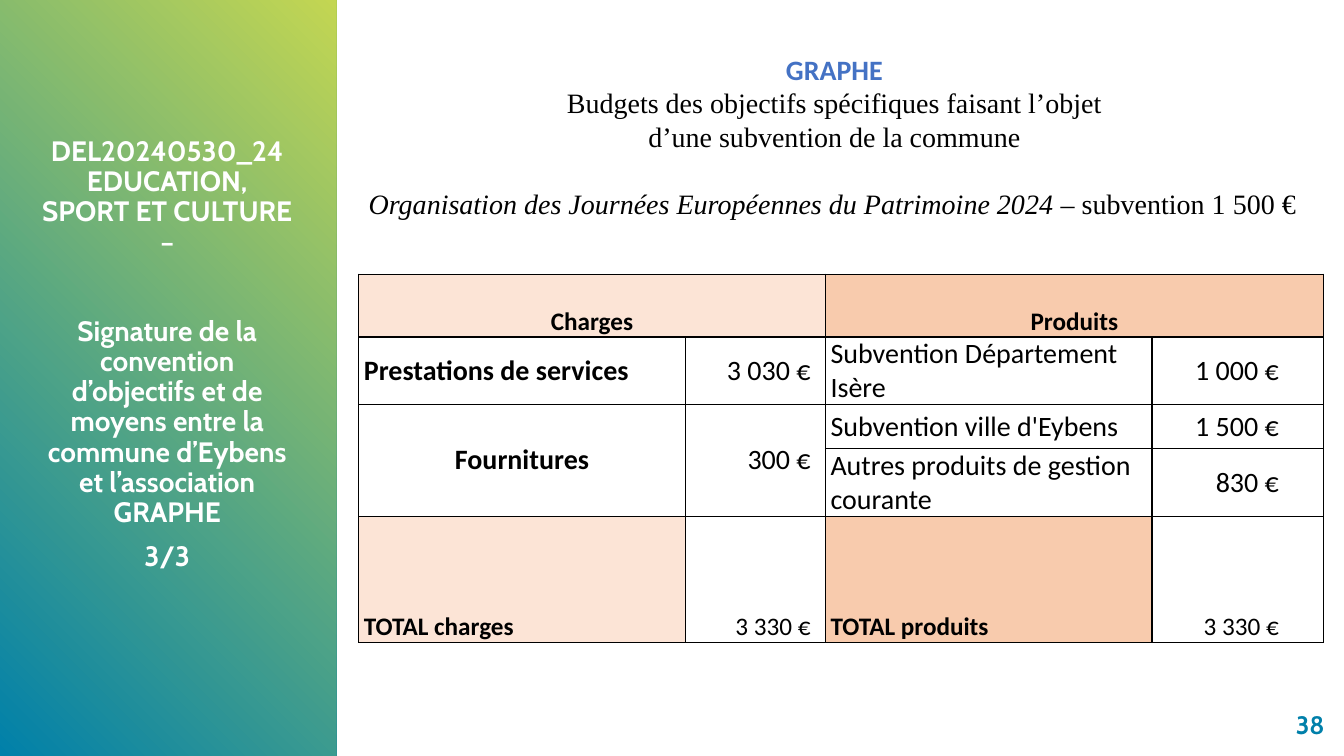
"""Build the slide on the budget of the association's funded objectives."""
from dataclasses import dataclass

from lxml.etree import SubElement
from pptx import Presentation
from pptx.dml.color import RGBColor
from pptx.enum.shapes import MSO_SHAPE as Shape
from pptx.enum.text import MSO_ANCHOR as Anchor, MSO_AUTO_SIZE as AutoSize, PP_ALIGN as Align
from pptx.oxml.ns import qn
from pptx.slide import Slide
from pptx.table import _Cell as Cell
from pptx.text.text import TextFrame
from pptx.util import Cm, Pt

COLORS = {
    "blue": "0080AA", "lime": "C3D652", "heading": "4472C4", "white": "FFFFFF",
    "black": "000000", "charges": "FCE4D6", "produits": "F8CBAD",
}
SERIF = "Times New Roman"
COL_WIDTHS = (8.23, 3.53, 8.23, 4.32)
ROW_HEIGHTS = (1.58, 1.7, 1.12, 1.7, 3.17)
AMOUNT_MARGINS = {1: 0.37, 3: 1.12}


@dataclass
class Entry:
    """One table cell with its place, span and look."""
    row: int
    col: int
    text: str
    bold: bool = False
    align: Align = Align.LEFT
    fill: str = ""
    rows: int = 1
    cols: int = 1


ENTRIES = [
    Entry(0, 0, "Charges", True, Align.CENTER, "charges", cols=2),
    Entry(0, 2, "Produits", True, Align.CENTER, "produits", cols=2),
    Entry(1, 0, "Prestations de services", True),
    Entry(1, 1, "3 030 €", align=Align.RIGHT),
    Entry(1, 2, "Subvention Département Isère"),
    Entry(1, 3, "1 000 €", align=Align.RIGHT),
    Entry(2, 0, "Fournitures", True, Align.CENTER, rows=2),
    Entry(2, 1, "300 €", align=Align.RIGHT, rows=2),
    Entry(2, 2, "Subvention ville d'Eybens"),
    Entry(2, 3, "1 500 €", align=Align.RIGHT),
    Entry(3, 2, "Autres produits de gestion courante"),
    Entry(3, 3, "830 €", align=Align.RIGHT),
    Entry(4, 0, "TOTAL charges", True, fill="charges"),
    Entry(4, 1, "3 330 €", align=Align.RIGHT),
    Entry(4, 2, "TOTAL produits", True, fill="produits"),
    Entry(4, 3, "3 330 €", align=Align.RIGHT),
]


def rgb(name: str) -> RGBColor:
    """Return the named colour."""
    return RGBColor.from_string(COLORS[name])


def write(tf: TextFrame, text: str, *, size: float = 20, font: str = "Calibri",
          color: str = "black", bold: bool = False, italic: bool = False,
          align: Align = Align.LEFT, before: float = 0,
          spacing: float | Pt | None = None, join: bool = False) -> None:
    """Write a paragraph, or join a run to the last one."""
    p = tf.paragraphs[-1]
    if p.runs and not join:
        p = tf.add_paragraph()
    if not join:
        p.alignment, p.space_before, p.line_spacing = align, Pt(before), spacing
    r = p.add_run()
    r.text = text
    r.font.size, r.font.name = Pt(size), font
    r.font.bold, r.font.italic = bold, italic
    r.font.color.rgb = rgb(color)


def add_box(s: Slide, left: float, top: float, width: float, height: float) -> TextFrame:
    """Add a wrapping text box and return its text frame."""
    tf = s.shapes.add_textbox(Cm(left), Cm(top), Cm(width), Cm(height)).text_frame
    tf.word_wrap = True
    return tf


def add_sidebar(s: Slide, height: int) -> None:
    """Draw the gradient band and set the title on it."""
    sp = s.shapes.add_shape(Shape.RECTANGLE, 0, 0, Cm(8.47), height)
    sp.shadow.inherit = False
    sp.line.fill.background()
    sp.fill.gradient()
    sp.fill.gradient_angle = 45
    for stop, position, name in zip(sp.fill.gradient_stops, (0, 1), ("blue", "lime")):
        stop.position = position
        stop.color.rgb = rgb(name)
    title = s.shapes.title
    title.element.addprevious(sp.element)
    title.left, title.top, title.width, title.height = Cm(0.81), Cm(3.33), Cm(6.81), Cm(13.84)
    tf = title.text_frame
    tf.word_wrap, tf.auto_size, tf.vertical_anchor = True, AutoSize.NONE, Anchor.TOP
    for text, before in (
        ("DEL20240530_24 EDUCATION, SPORT ET CULTURE –", 0),
        ("Signature de la convention d’objectifs et de moyens entre la commune "
         "d’Eybens et l’association GRAPHE", 42),
        ("3/3", 10),
    ):
        write(tf, text, font="Cabin", color="white", bold=True, align=Align.CENTER,
              before=before, spacing=0.9)


def add_heading(s: Slide) -> None:
    """Write the heading above the table."""
    tf = add_box(s, 9.04, 1.19, 23.98, 6.25)
    line = Pt(24)
    write(tf, "GRAPHE", color="heading", bold=True, align=Align.CENTER, spacing=line)
    for text in ("Budgets des objectifs spécifiques faisant l’objet",
                 "d’une subvention de la commune"):
        write(tf, text, font=SERIF, align=Align.CENTER, spacing=line)
    write(tf, "Organisation des Journées Européennes du Patrimoine 2024", font=SERIF,
          italic=True, before=24, spacing=line)
    write(tf, " – subvention 1 500 €", font=SERIF, join=True)


def add_borders(cell: Cell) -> None:
    """Give a cell a thin black line on each side."""
    tc_pr = cell._tc.get_or_add_tcPr()
    for side in ("a:lnL", "a:lnR", "a:lnT", "a:lnB"):
        ln = SubElement(tc_pr, qn(side), w=str(Pt(1)))
        fill = SubElement(ln, qn("a:solidFill"))
        SubElement(fill, qn("a:srgbClr"), val=COLORS["black"])


def add_budget(s: Slide) -> None:
    """Add the table of charges and income."""
    table = s.shapes.add_table(len(ROW_HEIGHTS), len(COL_WIDTHS), Cm(9.04), Cm(6.91),
                               Cm(sum(COL_WIDTHS)), Cm(sum(ROW_HEIGHTS))).table
    table.first_row = table.horz_banding = False
    for column, width in zip(table.columns, COL_WIDTHS):
        column.width = Cm(width)
    for row, height in zip(table.rows, ROW_HEIGHTS):
        row.height = Cm(height)
    for cell in table.iter_cells():
        add_borders(cell)
        cell.fill.background()
    outer = (0, len(ROW_HEIGHTS) - 1)
    for e in ENTRIES:
        cell = table.cell(e.row, e.col)
        if e.rows > 1 or e.cols > 1:
            cell.merge(table.cell(e.row + e.rows - 1, e.col + e.cols - 1))
        if e.fill:
            cell.fill.solid()
            cell.fill.fore_color.rgb = rgb(e.fill)
        cell.margin_left = cell.margin_right = Cm(0.13)
        cell.margin_top = cell.margin_bottom = 0
        if e.align == Align.RIGHT:
            cell.margin_right = Cm(AMOUNT_MARGINS[e.col])
        cell.vertical_anchor = Anchor.BOTTOM if e.row in outer else Anchor.MIDDLE
        write(cell.text_frame, e.text, size=18 if e.row in outer else 20,
              bold=e.bold, align=e.align)


def main() -> None:
    """Build and save the slide."""
    prs = Presentation()
    prs.slide_width, prs.slide_height = Cm(33.87), Cm(19.05)
    s = prs.slides.add_slide(prs.slide_layouts[5])
    add_sidebar(s, prs.slide_height)
    add_heading(s)
    add_budget(s)
    tf = add_box(s, 24.18, 17.73, 9.45, 1.04)
    tf.vertical_anchor = Anchor.MIDDLE
    write(tf, "38", size=18, font="Cabin", color="blue", bold=True, align=Align.RIGHT)
    prs.save("out.pptx")


if __name__ == "__main__":
    main()
